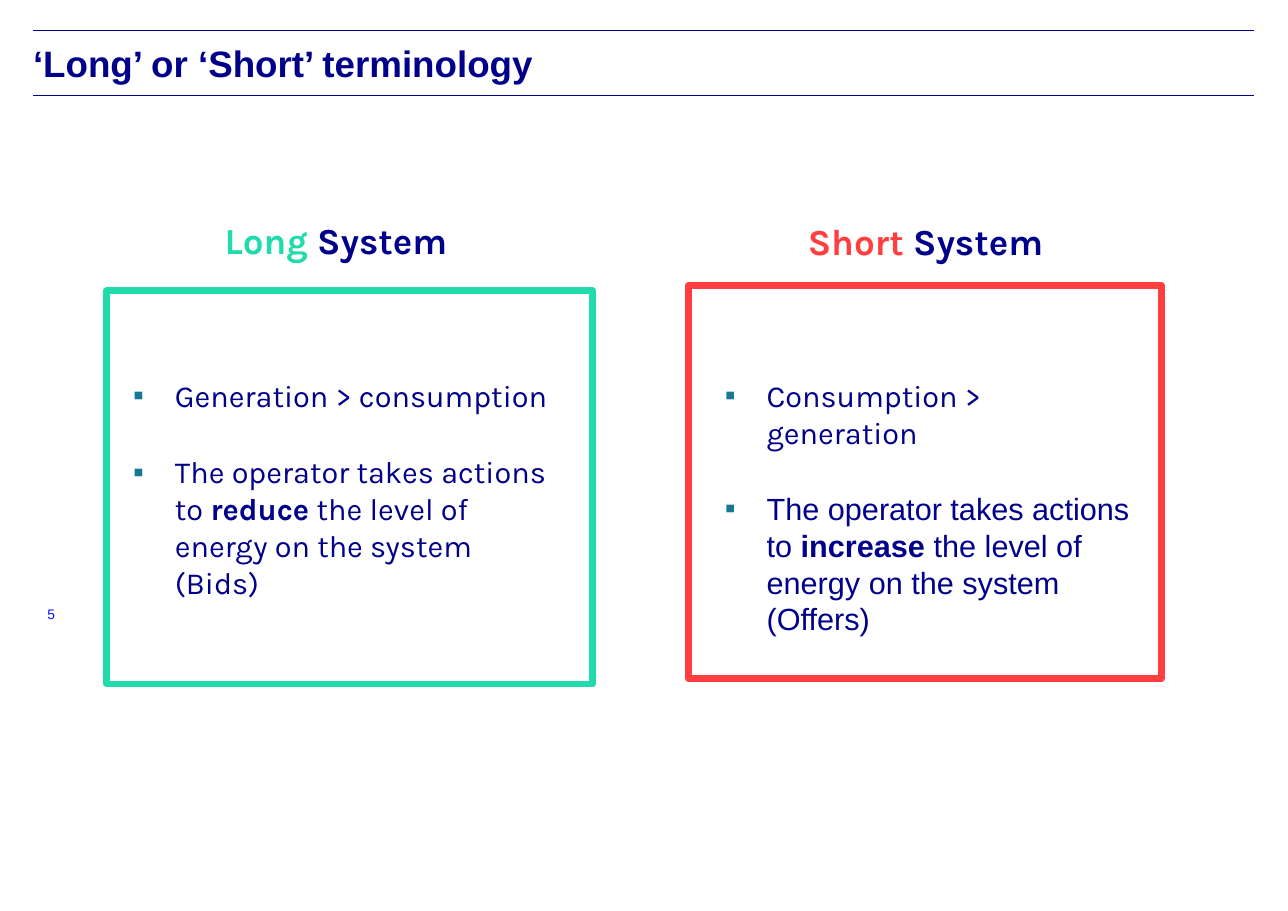
from lxml.etree import SubElement
from pptx import Presentation
from pptx.dml.color import RGBColor
from pptx.enum.shapes import MSO_CONNECTOR, MSO_SHAPE
from pptx.enum.text import MSO_ANCHOR, PP_ALIGN
from pptx.oxml.ns import qn
from pptx.util import Emu, Pt

PIXEL = 9144
NAVY = "00008B"
BULLET = "167895"
LONG = "21DBAD"
SHORT = "FF3F3F"


def px(*lengths):
    return [Emu(length * PIXEL) for length in lengths]


def color(value):
    return RGBColor.from_string(value)


def set_margins(text_frame, left=0, top=0, right=0, bottom=0):
    (text_frame.margin_left, text_frame.margin_top,
     text_frame.margin_right, text_frame.margin_bottom) = px(left, top, right, bottom)


def add_run(paragraph, text, size, font_name, font_color, bold=False):
    run = paragraph.add_run()
    run.text = text
    format_font(run.font, size, font_name, font_color, bold)


def format_font(font, size, font_name, font_color, bold=False):
    font.size = Pt(size)
    font.name = font_name
    font.bold = bold
    font.color.rgb = color(font_color)


def add_title(slide, text):
    title = slide.shapes.title
    title.left, title.top, title.width, title.height = px(30, 33, 1108, 54)
    text_frame = title.text_frame
    text_frame.text = text
    text_frame.vertical_anchor = MSO_ANCHOR.TOP
    set_margins(text_frame, top=4)
    paragraph = text_frame.paragraphs[0]
    paragraph.alignment = PP_ALIGN.LEFT
    format_font(paragraph.runs[0].font, 24, "Arial", NAVY, True)


def add_rule(slide, top):
    rule = slide.shapes.add_connector(MSO_CONNECTOR.STRAIGHT, *px(30, top, 1138, top))
    rule.line.color.rgb = color(NAVY)
    rule.line.width = Pt(0.5)
    SubElement(rule._element.spPr, qn("a:effectLst"))


def add_frame(slide, bounds, line_color):
    frame = slide.shapes.add_shape(MSO_SHAPE.RECTANGLE, *px(*bounds))
    frame.shadow.inherit = False
    frame.fill.background()
    frame.line.color.rgb = color(line_color)
    frame.line.width = Pt(4.5)
    SubElement(frame.line._get_or_add_ln(), qn("a:round"))


def add_heading(slide, left, top, word, word_color):
    heading = slide.shapes.add_shape(MSO_SHAPE.ROUNDED_RECTANGLE, *px(left, top, 318, 39))
    heading.adjustments[0] = 0
    heading.shadow.inherit = False
    heading.fill.background()
    heading.line.fill.background()
    text_frame = heading.text_frame
    text_frame.word_wrap = True
    text_frame.vertical_anchor = MSO_ANCHOR.MIDDLE
    set_margins(text_frame, left=12, right=12)
    paragraph = text_frame.paragraphs[0]
    paragraph.alignment = PP_ALIGN.CENTER
    add_run(paragraph, word, 24, "Karla", word_color, True)
    add_run(paragraph, " System", 24, "Karla", NAVY, True)


def add_bullet(paragraph):
    properties = paragraph._p.get_or_add_pPr()
    indent, hanging = px(47, -38)
    properties.set("marL", str(indent))
    properties.set("indent", str(hanging))
    bullet_color = SubElement(properties, qn("a:buClr"))
    SubElement(bullet_color, qn("a:srgbClr"), val=BULLET)
    SubElement(properties, qn("a:buFont"), typeface="Arial")
    SubElement(properties, qn("a:buChar"), char="▪")


def add_points(slide, left, width, balance, verb, action, action_font):
    text_box = slide.shapes.add_textbox(*px(left, 337, width, 215))
    text_frame = text_box.text_frame
    text_frame.word_wrap = True
    first = text_frame.paragraphs[0]
    second = text_frame.add_paragraph()
    for paragraph in (first, second):
        add_bullet(paragraph)
        paragraph.space_after = Pt(2)
    second.space_before = Pt(24)
    add_run(first, balance, 20, "Karla", NAVY)
    add_run(second, "The operator takes actions to ", 20, action_font, NAVY)
    add_run(second, verb, 20, action_font, NAVY, True)
    add_run(second, f" the level of energy on the system ({action})", 20, action_font, NAVY)


def add_page_number(slide, number):
    text_box = slide.shapes.add_textbox(*px(43, 550, 108, 20))
    text_frame = text_box.text_frame
    text_frame.word_wrap = True
    set_margins(text_frame)
    add_run(text_frame.paragraphs[0], number, 9, "Arial", "0E0EFF")


def main():
    presentation = Presentation()
    presentation.slide_width, presentation.slide_height = px(1169, 827)
    slide = presentation.slides.add_slide(presentation.slide_layouts[5])
    for top in (28, 87):
        add_rule(slide, top)
    add_title(slide, "‘Long’ or ‘Short’ terminology")
    add_points(slide, 639, 403, "Consumption > generation", "increase", "Offers", "Arial")
    add_points(slide, 102, 406, "Generation > consumption", "reduce", "Bids", "Karla")
    add_page_number(slide, "5")
    add_frame(slide, (97, 264, 441, 357), LONG)
    add_frame(slide, (625, 259, 429, 357), SHORT)
    add_heading(slide, 681, 199, "Short", SHORT)
    add_heading(slide, 146, 198, "Long", LONG)
    presentation.save("out.pptx")


if __name__ == "__main__":
    main()
